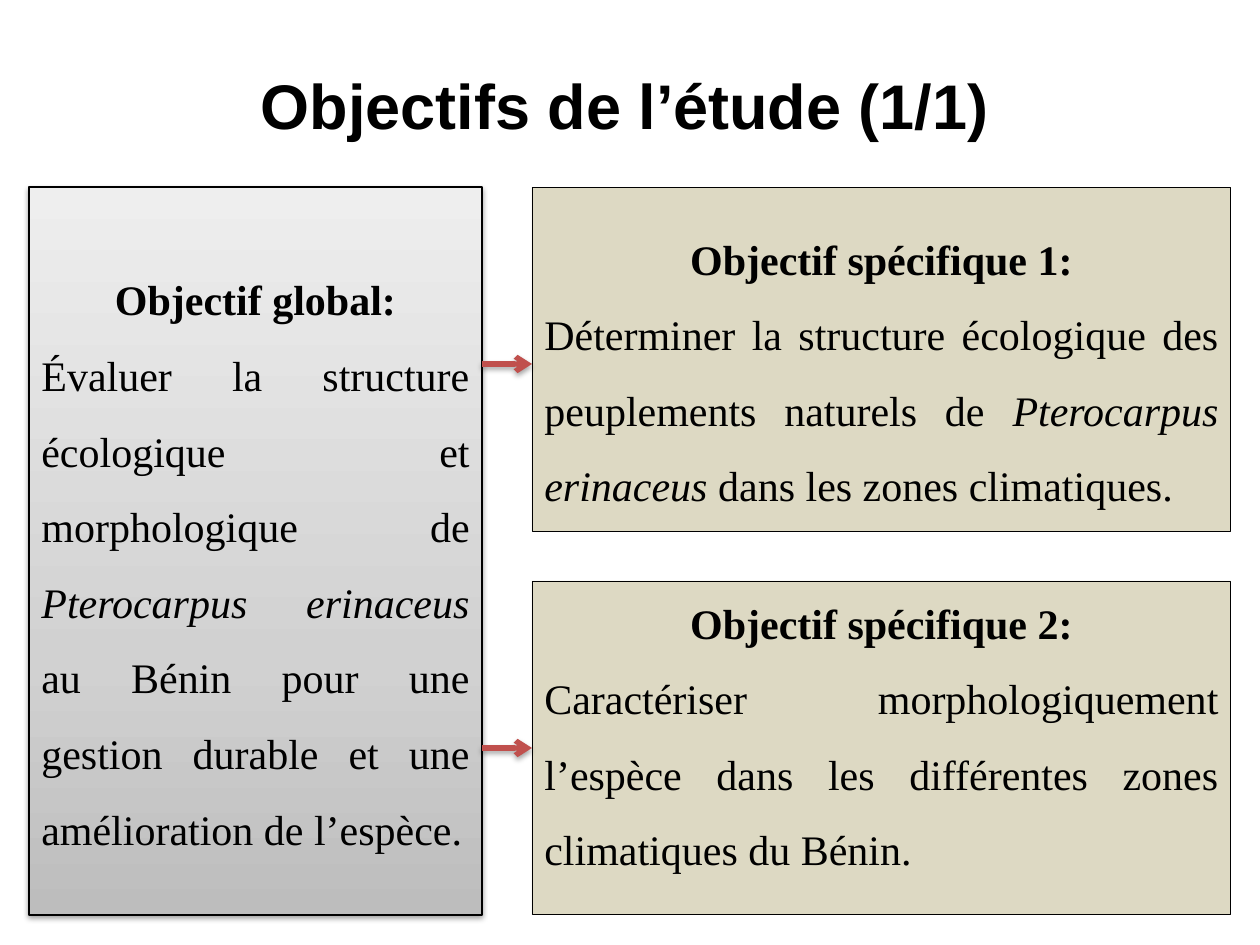
from dataclasses import dataclass
from typing import Any, NamedTuple, Optional

from lxml.etree import SubElement
from pptx import Presentation
from pptx.dml.color import RGBColor
from pptx.enum.shapes import MSO_CONNECTOR, MSO_SHAPE
from pptx.enum.text import MSO_ANCHOR, PP_ALIGN
from pptx.oxml.ns import qn
from pptx.util import Pt

EMU_PER_PX = 914400 / 126
BLACK = "000000"
BEIGE = "DDD9C3"
RED = "C0504D"
GREYS = ((0, "BDBDBD"), (35, "D1D1D1"), (100, "EEEEEE"))
BODY_FONT = {"name": "Times New Roman", "size": Pt(24)}
TITLE_FONT = {"name": "Arial", "size": Pt(36), "bold": True}


class Run(NamedTuple):
    text: str
    italic: bool = False


class Shadow(NamedTuple):
    opacity: int
    blur: float
    distance: float


@dataclass(frozen=True)
class Objective:
    left: int
    top: int
    width: int
    height: int
    heading: str
    body: tuple[Run, ...]
    line_width: float = 0.5
    bottom_inset: int = 6
    shadow: Optional[Shadow] = None


OBJECTIVES = (
    Objective(
        29, 187, 453, 728, "Objectif global:",
        (
            Run("Évaluer la structure écologique et morphologique de "),
            Run("Pterocarpus erinaceus", True),
            Run(" au Bénin pour une gestion durable et une amélioration de l’espèce."),
        ),
        line_width=0.75, shadow=Shadow(38, 3.1, 1.6),
    ),
    Objective(
        532, 581, 699, 334, "Objectif spécifique 2:",
        (Run("Caractériser morphologiquement l’espèce dans les différentes "
             "zones climatiques du Bénin."),),
        bottom_inset=56,
    ),
    Objective(
        532, 187, 699, 344, "Objectif spécifique 1:",
        (
            Run("Déterminer la structure écologique des peuplements naturels de "),
            Run("Pterocarpus erinaceus ", True),
            Run("dans les zones climatiques."),
        ),
    ),
)
ARROW_HEIGHTS = (364, 748)
ARROW_SHADOW = Shadow(35, 3.1, 1.8)


def px(length: int) -> int:
    return round(length * EMU_PER_PX)


def color(value: str) -> RGBColor:
    return RGBColor.from_string(value)


def set_values(target: Any, values: dict[str, Any]) -> None:
    for name, value in values.items():
        setattr(target, name, value)


def add_run(paragraph: Any, text: str, font: dict[str, Any]) -> None:
    run = paragraph.add_run()
    run.text = text
    set_values(run.font, font)
    run.font.color.rgb = color(BLACK)


def add_shadow(effects: Any, shadow: Shadow) -> None:
    outer = SubElement(
        effects, qn("a:outerShdw"), blurRad=str(Pt(shadow.blur)),
        dist=str(Pt(shadow.distance)), dir="5400000", rotWithShape="0",
    )
    shade = SubElement(outer, qn("a:srgbClr"), val=BLACK)
    SubElement(shade, qn("a:alpha"), val=str(shadow.opacity * 1000))


def fill_with_greys(shape: Any) -> None:
    shape.fill.gradient()
    shape.fill.gradient_angle = 90
    stops = shape._element.spPr.find(".//" + qn("a:gsLst"))
    for stop in list(stops):
        stops.remove(stop)
    for position, value in GREYS:
        stop = SubElement(stops, qn("a:gs"), pos=str(position * 1000))
        SubElement(stop, qn("a:srgbClr"), val=value)


def add_title(slide: Any, text: str) -> None:
    box = slide.shapes.add_textbox(px(49), px(10), px(1152), px(108))
    set_values(box.text_frame, {
        "word_wrap": True,
        "vertical_anchor": MSO_ANCHOR.TOP,
        "margin_top": px(56),
    })
    paragraph = box.text_frame.paragraphs[0]
    paragraph.alignment = PP_ALIGN.CENTER
    add_run(paragraph, text, TITLE_FONT)


def add_objective(slide: Any, objective: Objective) -> None:
    shape = slide.shapes.add_shape(
        MSO_SHAPE.RECTANGLE, px(objective.left), px(objective.top),
        px(objective.width), px(objective.height),
    )
    shape.line.color.rgb = color(BLACK)
    shape.line.width = Pt(objective.line_width)
    shape.shadow.inherit = False
    if objective.shadow:
        fill_with_greys(shape)
        add_shadow(shape._element.spPr.find(qn("a:effectLst")), objective.shadow)
    else:
        shape.fill.solid()
        shape.fill.fore_color.rgb = color(BEIGE)

    frame = shape.text_frame
    set_values(frame, {
        "word_wrap": True,
        "vertical_anchor": MSO_ANCHOR.MIDDLE,
        "margin_bottom": px(objective.bottom_inset),
    })
    heading, body = frame.paragraphs[0], frame.add_paragraph()
    set_values(heading, {"alignment": PP_ALIGN.CENTER, "line_spacing": 1.5})
    set_values(body, {"alignment": PP_ALIGN.JUSTIFY, "line_spacing": 1.5})
    add_run(heading, objective.heading, {**BODY_FONT, "bold": True})
    for run in objective.body:
        add_run(body, run.text, {**BODY_FONT, "italic": run.italic})


def add_arrow(slide: Any, y: int) -> None:
    arrow = slide.shapes.add_connector(
        MSO_CONNECTOR.STRAIGHT, px(482), px(y), px(532), px(y)
    )
    arrow.line.color.rgb = color(RED)
    arrow.line.width = Pt(3)
    properties = arrow._element.spPr
    SubElement(properties.find(qn("a:ln")), qn("a:tailEnd"), type="arrow")
    add_shadow(SubElement(properties, qn("a:effectLst")), ARROW_SHADOW)


def main() -> None:
    presentation = Presentation()
    set_values(presentation, {"slide_width": px(1260), "slide_height": px(945)})
    slide = presentation.slides.add_slide(presentation.slide_layouts[6])
    for objective in OBJECTIVES:
        add_objective(slide, objective)
    add_title(slide, "Objectifs de l’étude (1/1)")
    for y in ARROW_HEIGHTS:
        add_arrow(slide, y)
    presentation.save("out.pptx")


if __name__ == "__main__":
    main()
